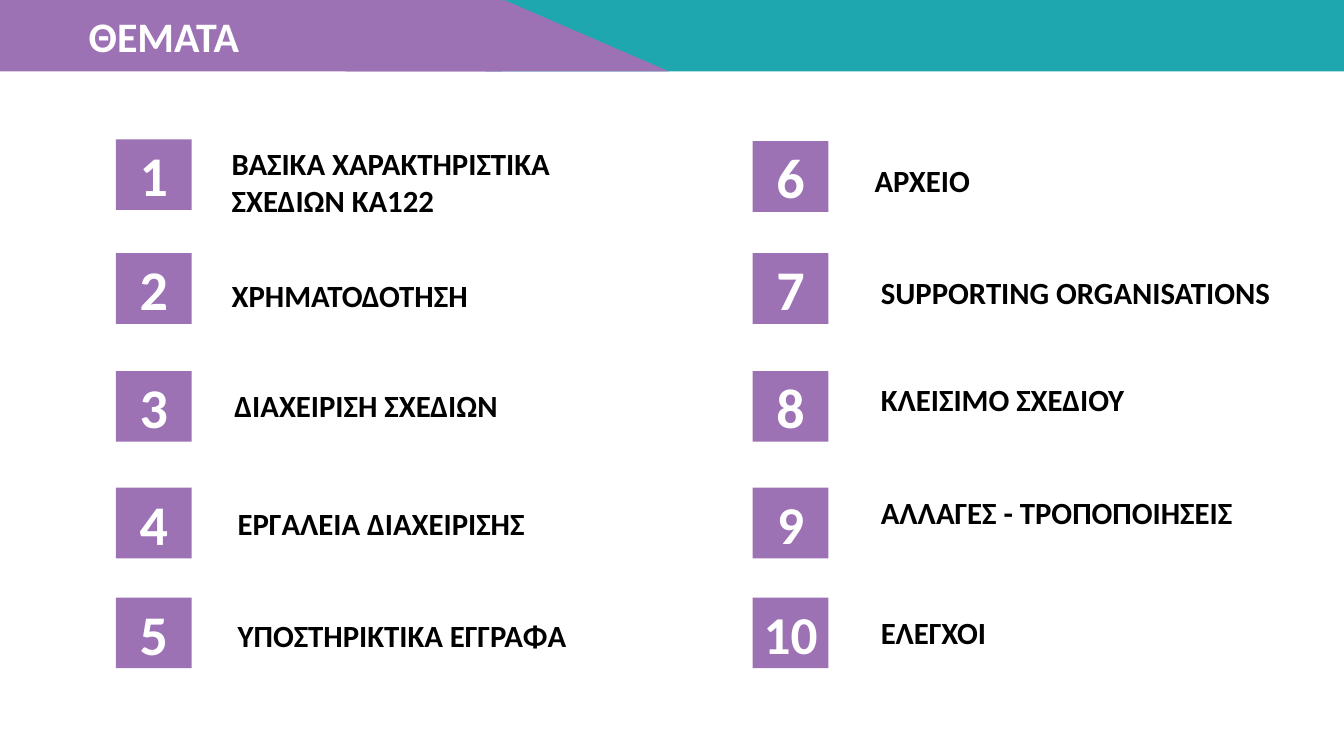
"""Build the slide that lists ten numbered topics in two columns."""
from dataclasses import dataclass
from typing import Any

from pptx import Presentation
from pptx.dml.color import RGBColor
from pptx.enum.shapes import MSO_SHAPE
from pptx.enum.text import MSO_ANCHOR, MSO_AUTO_SIZE, PP_ALIGN
from pptx.util import Cm, Pt


@dataclass(frozen=True)
class Theme:
    font: str = "Calibri"
    teal: RGBColor = RGBColor(0x1E, 0xA7, 0xAE)
    purple: RGBColor = RGBColor(0x9D, 0x72, 0xB5)
    white: RGBColor = RGBColor(0xFF, 0xFF, 0xFF)
    black: RGBColor = RGBColor(0, 0, 0)
    title: float = 30
    label: float = 22
    digit: float = 40
    small: float = 38


@dataclass(frozen=True)
class Box:
    left: float
    top: float
    width: float
    height: float

    def sides(self) -> tuple[Cm, Cm, Cm, Cm]:
        return Cm(self.left), Cm(self.top), Cm(self.width), Cm(self.height)


@dataclass(frozen=True)
class Topic:
    text: str
    box: Box
    wrap: bool = False
    space: float = 1.0


THEME = Theme()
LINE = 1.19
BAR = 1.8
TILE = (1.91, 1.78)
LEFTS = (2.92, 18.97)
ROWS = (3.51, 6.38, 9.35, 12.29, 15.06)
DROP = 0.05
TOPICS = (
    Topic("ΒΑΣΙΚΑ ΧΑΡΑΚΤΗΡΙΣΤΙΚΑ\nΣΧΕΔΙΩΝ ΚΑ122", Box(5.59, 3.53, 15.88, 2.13), True),
    Topic("ΧΡΗΜΑΤΟΔΟΤΗΣΗ", Box(5.59, 6.38, 15.88, 3.07), True, 1.5),
    Topic("ΔΙΑΧΕΙΡΙΣΗ ΣΧΕΔΙΩΝ", Box(5.66, 9.63, 7.21, LINE)),
    Topic("ΕΡΓΑΛΕΙΑ ΔΙΑΧΕΙΡΙΣΗΣ", Box(5.74, 12.6, 7.85, LINE)),
    Topic("ΥΠΟΣΤΗΡΙΚΤΙΚΑ ΕΓΓΡΑΦΑ", Box(5.74, 15.42, 8.89, LINE)),
    Topic("ΑΡΧΕΙΟ", Box(21.79, 3.96, 2.95, LINE)),
    Topic("SUPPORTING ORGANISATIONS", Box(21.95, 6.78, 10.44, LINE)),
    Topic("ΚΛΕΙΣΙΜΟ ΣΧΕΔΙΟΥ", Box(21.95, 9.47, 6.73, LINE)),
    Topic("ΑΛΛΑΓΕΣ - ΤΡΟΠΟΠΟΙΗΣΕΙΣ", Box(21.95, 12.32, 9.5, LINE)),
    Topic("ΕΛΕΓΧΟΙ", Box(21.95, 15.34, 3.2, LINE)),
)


def apply(target: Any, values: dict[str, Any]) -> None:
    for name, value in values.items():
        setattr(target, name, value)


def write(shape: Any, text: str, size: float, color: RGBColor,
          frame: dict[str, Any], para: dict[str, Any]) -> None:
    body = shape.text_frame
    body.text = text
    apply(body, frame)
    for line in body.paragraphs:
        apply(line, para)
        for run in line.runs:
            apply(run.font, {"name": THEME.font, "size": Pt(size), "bold": True})
            run.font.color.rgb = color


def block(shapes: Any, kind: MSO_SHAPE, box: Box, color: RGBColor) -> Any:
    shape = shapes.add_shape(kind, *box.sides())
    shape.shadow.inherit = False
    shape.fill.solid()
    shape.fill.fore_color.rgb = color
    shape.line.fill.background()
    return shape


def header(slide: Any) -> None:
    block(slide.shapes, MSO_SHAPE.RECTANGLE, Box(12.24, 0, 21.63, BAR), THEME.teal)
    group = slide.shapes.add_group_shape().shapes
    block(group, MSO_SHAPE.RECTANGLE, Box(0, 0, 12.65, BAR), THEME.purple)
    slope = block(group, MSO_SHAPE.ISOSCELES_TRIANGLE, Box(8.71, 0, 8.15, BAR), THEME.purple)
    slope.adjustments[0] = 0.49
    title = slide.shapes.title
    sides = Box(1.98, 0.13, 4.34, 1.55).sides()
    apply(title, dict(zip(("left", "top", "width", "height"), sides)))
    write(title, "ΘΕΜΑΤΑ", THEME.title, THEME.white,
          {"word_wrap": False, "auto_size": MSO_AUTO_SIZE.SHAPE_TO_FIT_TEXT,
           "vertical_anchor": MSO_ANCHOR.TOP},
          {"alignment": PP_ALIGN.LEFT})
    title.element.getparent().append(title.element)


def entry(slide: Any, index: int, topic: Topic) -> None:
    side, row = divmod(index, len(ROWS))
    top = ROWS[row] + (DROP if side and not row else 0)
    tile = block(slide.shapes, MSO_SHAPE.RECTANGLE, Box(LEFTS[side], top, *TILE), THEME.purple)
    size = THEME.digit if index < 8 else THEME.small
    write(tile, str(index + 1), size, THEME.white,
          {"vertical_anchor": MSO_ANCHOR.MIDDLE}, {"alignment": PP_ALIGN.CENTER})
    label = slide.shapes.add_textbox(*topic.box.sides())
    write(label, topic.text, THEME.label, THEME.black,
          {"word_wrap": topic.wrap, "auto_size": MSO_AUTO_SIZE.SHAPE_TO_FIT_TEXT},
          {"line_spacing": topic.space})


def main() -> None:
    deck = Presentation()
    apply(deck, {"slide_width": Cm(33.87), "slide_height": Cm(19.05)})
    slide = deck.slides.add_slide(deck.slide_layouts.get_by_name("Title Only"))
    header(slide)
    for index, topic in enumerate(TOPICS):
        entry(slide, index, topic)
    deck.save("out.pptx")


if __name__ == "__main__":
    main()
